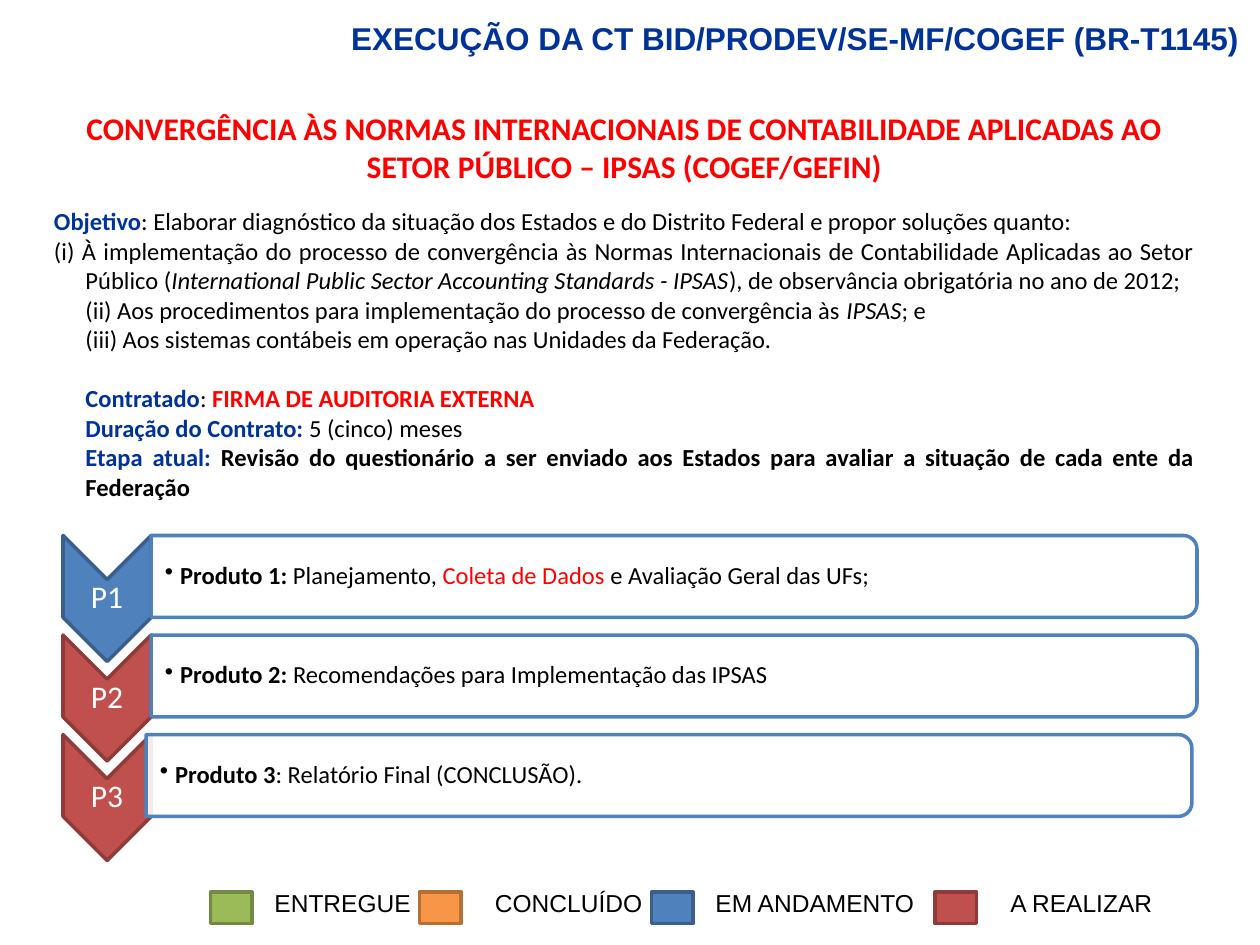
from lxml import etree
from pptx import Presentation
from pptx.dml.color import RGBColor
from pptx.enum.shapes import MSO_SHAPE
from pptx.enum.text import MSO_ANCHOR, PP_ALIGN
from pptx.oxml.ns import qn
from pptx.util import Inches, Pt

CHEVRON, RECT = MSO_SHAPE.CHEVRON, MSO_SHAPE.RECTANGLE
ROUNDED_BAR = MSO_SHAPE.ROUND_2_SAME_RECTANGLE
MIDDLE, TOP = MSO_ANCHOR.MIDDLE, MSO_ANCHOR.TOP
LEFT, CENTER, JUSTIFY = PP_ALIGN.LEFT, PP_ALIGN.CENTER, PP_ALIGN.JUSTIFY

BLACK = RGBColor(0x00, 0x00, 0x00)
WHITE = RGBColor(0xFF, 0xFF, 0xFF)
RED = RGBColor(0xFF, 0x00, 0x00)
NAVY = RGBColor(0x00, 0x33, 0x99)
BLUE = RGBColor(0x4F, 0x81, 0xBD)
BLUE_EDGE = RGBColor(0x3A, 0x5F, 0x8C)
BRICK = RGBColor(0xC0, 0x50, 0x4D)
BRICK_EDGE = RGBColor(0x8E, 0x3B, 0x39)
GREEN = RGBColor(0x9B, 0xBB, 0x59)
GREEN_EDGE = RGBColor(0x73, 0x8A, 0x42)
ORANGE = RGBColor(0xF7, 0x96, 0x46)
ORANGE_EDGE = RGBColor(0xB7, 0x6F, 0x34)

# Each run is (text, colour, bold, italic), the last three optional.
# Each paragraph is (left margin, first-line indent, space before in points, runs).
CONTRACT = [
    (0, 0, 12.2, [("Objetivo", NAVY, True),
                  (": Elaborar diagnóstico da situação dos Estados e do Distrito Federal "
                   "e propor soluções quanto:",)]),
    (0.25, -0.25, 0, [("(i) À implementação do processo de convergência às Normas Internacionais "
                       "de Contabilidade Aplicadas ao Setor Público (",),
                      ("International Public Sector Accounting Standards - IPSAS",
                       BLACK, False, True),
                      ("), de observância obrigatória no ano de 2012; ",)]),
    (0.25, 0, 0, [("(ii) Aos procedimentos para implementação do processo de convergência às ",),
                  ("IPSAS", BLACK, False, True), ("; e",)]),
    (0.25, 0, 0, [("(iii) Aos sistemas contábeis em operação nas Unidades da Federação.",)]),
    (0.25, 0, 17.1, [("Contratado", NAVY, True), (": ",),
                     ("FIRMA DE AUDITORIA EXTERNA", RED, True)]),
    (0.25, 0, 0, [("Duração do Contrato: ", NAVY, True), ("5 (cinco) meses ",)]),
    (0.25, 0, 0, [("Etapa atual: ", NAVY, True),
                  ("Revisão do questionário a ser enviado aos Estados para avaliar a situação "
                   "de cada ente da Federação", BLACK, True)]),
]

# (tag, fill, edge, shift of the bar, runs)
PRODUCTS = [
    ("P1", BLUE, BLUE_EDGE, 0, [("Produto 1:", BLACK, True), (" Planejamento, ",),
                                ("Coleta de Dados ", RED), ("e Avaliação Geral das UFs;",)]),
    ("P2", BRICK, BRICK_EDGE, 0, [("Produto 2: ", BLACK, True),
                                  ("Recomendações para Implementação das IPSAS",)]),
    ("P3", BRICK, BRICK_EDGE, -0.04, [("Produto 3", BLACK, True),
                                      (": Relatório Final (CONCLUSÃO).",)]),
]

# (swatch left, label left, label width, label, fill, edge)
STATUSES = [
    (1.67, 2.08, 1.5, "ENTREGUE", GREEN, GREEN_EDGE),
    (3.33, 3.83, 1.5, "CONCLUÍDO", ORANGE, ORANGE_EDGE),
    (5.17, 5.58, 1.92, "EM ANDAMENTO", BLUE, BLUE_EDGE),
    (7.42, 7.92, 1.92, "A REALIZAR", BRICK, BRICK_EDGE),
]


def add_box(slide, left, top, width, height, insets=(0.1, 0.05, 0.1, 0.05), anchor=TOP):
    """Add a wrapping text box, lengths in inches, and return its text frame."""
    frame = slide.shapes.add_textbox(
        Inches(left), Inches(top), Inches(width), Inches(height)).text_frame
    frame.word_wrap = True
    frame.vertical_anchor = anchor
    frame.margin_left, frame.margin_top, frame.margin_right, frame.margin_bottom = map(
        Inches, insets)
    return frame


def add_runs(paragraph, runs, size, font="Calibri", align=LEFT):
    paragraph.alignment = align
    for text, *style in runs:
        color, bold, italic = style + [BLACK, False, False][len(style):]
        run = paragraph.add_run()
        run.text = text
        run.font.name, run.font.size = font, Pt(size)
        run.font.bold, run.font.italic = bold, italic
        run.font.color.rgb = color


def set_indent(paragraph, margin, first_line):
    properties = paragraph._p.get_or_add_pPr()
    properties.set("marL", str(Inches(margin)))
    properties.set("indent", str(Inches(first_line)))
    return properties


def add_filled(slide, kind, left, top, width, height, fill, edge, rotation=0):
    shape = slide.shapes.add_shape(
        kind, Inches(left), Inches(top), Inches(width), Inches(height))
    shape.rotation = rotation
    shape.shadow.inherit = False
    shape.fill.solid()
    shape.fill.fore_color.rgb = fill
    shape.line.color.rgb = edge
    shape.line.width = Pt(2)
    return shape


def add_turned(slide, kind, left, top, width, height, fill, edge):
    """Add a shape turned by 90 degrees that covers the given box."""
    return add_filled(slide, kind, left + (width - height) / 2, top + (height - width) / 2,
                      height, width, fill, edge, 90)


def add_header(slide, left, top, width, height):
    frame = add_box(slide, left, top, width, height, (0.26, 0.05, 0.1, 0.05))
    add_runs(frame.paragraphs[0],
             [("EXECUÇÃO DA CT BID/PRODEV/SE-MF/COGEF (BR-T1145)", NAVY, True)],
             18, "Arial", CENTER)


def add_contract(slide, left, top, width, height):
    frame = add_box(slide, left, top, width, height)
    add_runs(frame.paragraphs[0],
             [("CONVERGÊNCIA ÀS NORMAS INTERNACIONAIS DE CONTABILIDADE APLICADAS AO "
               "SETOR PÚBLICO – IPSAS (COGEF/GEFIN)", RED, True)], 18, align=CENTER)
    for margin, first_line, before, runs in CONTRACT:
        paragraph = frame.add_paragraph()
        set_indent(paragraph, margin, first_line)
        paragraph.space_before = Pt(before)
        add_runs(paragraph, runs, 14, align=JUSTIFY)


def add_product(slide, left, top, width, tag, fill, edge, shift, runs):
    tag_width, bar_height = 0.7, 0.65
    add_turned(slide, CHEVRON, left, top, tag_width, 1, fill, edge)
    tag_frame = add_box(slide, left, top + 0.35, tag_width, 0.3, (0.01,) * 4, MIDDLE)
    tag_frame.paragraphs[0].line_spacing = 0.9
    add_runs(tag_frame.paragraphs[0], [(tag, WHITE)], 18, align=CENTER)

    bar_left, bar_width = left + tag_width + shift, width - tag_width
    bar = add_turned(slide, ROUNDED_BAR, bar_left, top, bar_width, bar_height, WHITE, BLUE)
    bar_color = bar._element.spPr.find(qn("a:solidFill"))[0]
    etree.SubElement(bar_color, qn("a:alpha"), val="90000")

    frame = add_box(slide, bar_left, top + 0.03, bar_width - 0.03, 0.59,
                    (0.11, 0.01, 0.01, 0.01), MIDDLE)
    paragraph = frame.paragraphs[0]
    properties = set_indent(paragraph, 0.12, -0.12)
    etree.SubElement(properties, qn("a:buChar"), char="•")
    paragraph.line_spacing = 0.9
    add_runs(paragraph, runs, 14)


def add_products(slide, left, top, width, step):
    for row, product in enumerate(PRODUCTS):
        add_product(slide, left, top + row * step, width, *product)


def add_legend(slide, top):
    for swatch_left, label_left, label_width, label, fill, edge in STATUSES:
        add_filled(slide, RECT, swatch_left, top + 0.08, 0.33, 0.25, fill, edge)
        frame = add_box(slide, label_left, top, label_width, 0.34)
        add_runs(frame.paragraphs[0], [(label,)], 14, "Arial")


def main():
    presentation = Presentation()
    presentation.slide_width, presentation.slide_height = Inches(10), Inches(7.5)
    slide = presentation.slides.add_slide(presentation.slide_layouts[6])
    add_products(slide, 0.5, 4.25, 9, 0.79)
    add_header(slide, 2.42, 0.1, 7.62, 0.4)
    add_contract(slide, 0.33, 0.82, 9.25, 3.67)
    add_legend(slide, 7)
    presentation.save("out.pptx")


if __name__ == "__main__":
    main()
